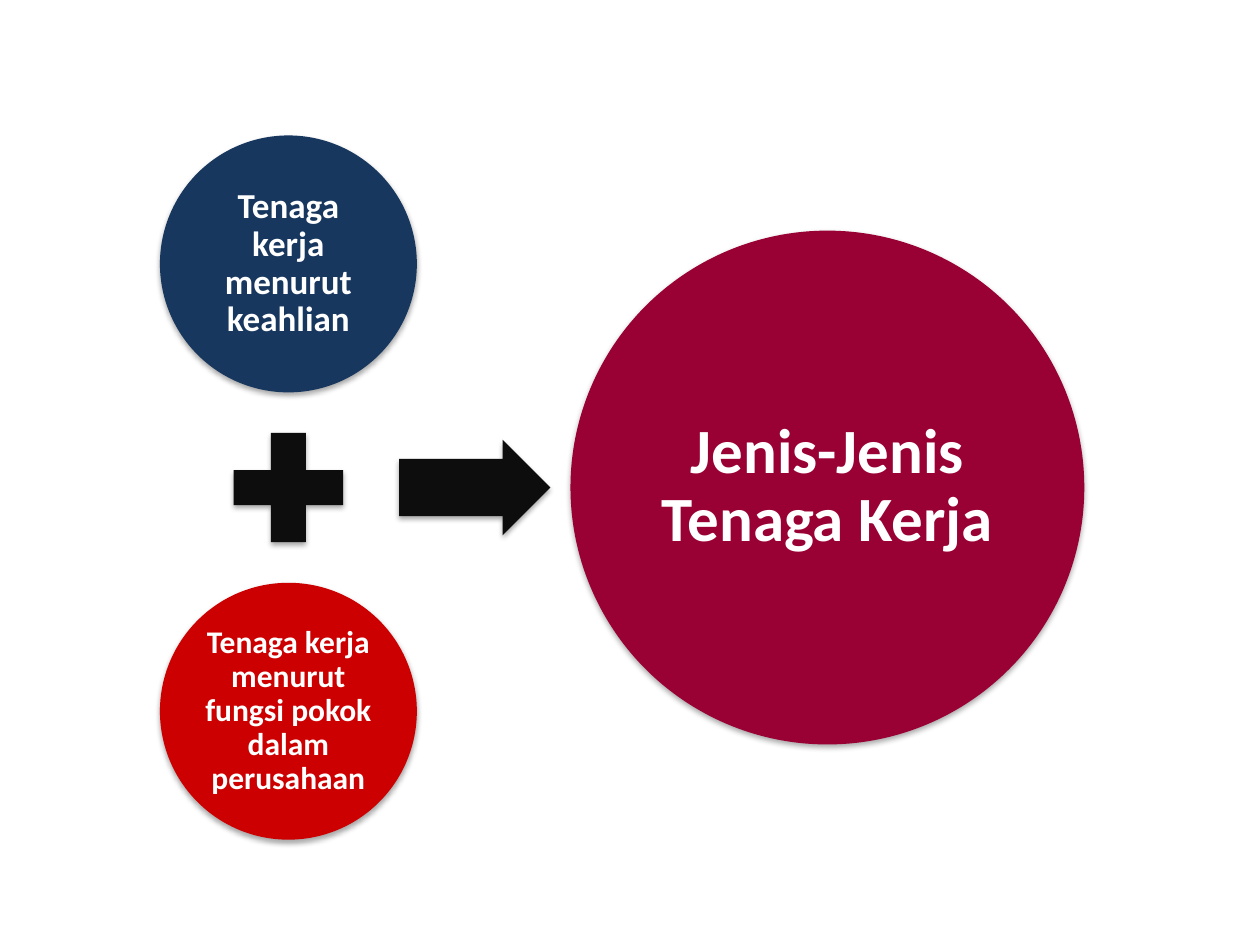
from dataclasses import dataclass

from lxml import etree
from pptx import Presentation
from pptx.dml import color
from pptx.enum import shapes, text
from pptx.oxml import ns
from pptx.util import Pt


@dataclass(frozen=True)
class Theme:
    font: str = "Calibri"
    white: str = "FFFFFF"
    navy: str = "17375E"
    red: str = "CC0000"
    maroon: str = "990033"
    black: str = "0D0D0D"
    skill_size: int = 20
    function_size: int = 18
    result_size: int = 36


THEME = Theme()
MIDDLE_Y = 278.6
LEFT_X = 164.8
CIRCLE_OFFSET = 127.8
SMALL_DIAMETER = 146.8
LARGE_DIAMETER = 2 * SMALL_DIAMETER


def add_shadow(shape):
    shape.shadow.inherit = False
    effects = shape._element.spPr.find(ns.qn("a:effectLst"))
    shadow = etree.SubElement(
        effects, ns.qn("a:outerShdw"), blurRad=str(Pt(3.1)), dist=str(Pt(1.8)),
        dir="5400000", rotWithShape="0")
    shadow_color = etree.SubElement(shadow, ns.qn("a:srgbClr"), val="000000")
    etree.SubElement(shadow_color, ns.qn("a:alpha"), val="35000")


def add_centered_shape(slide, kind, center_x, center_y, width, height, fill):
    shape = slide.shapes.add_shape(
        kind, Pt(center_x - width / 2), Pt(center_y - height / 2), Pt(width), Pt(height))
    shape.fill.solid()
    shape.fill.fore_color.rgb = color.RGBColor.from_string(fill)
    shape.line.fill.background()
    add_shadow(shape)
    return shape


def add_circle(slide, center_x, center_y, diameter, fill, label, size, inset):
    circle = add_centered_shape(
        slide, shapes.MSO_SHAPE.OVAL, center_x, center_y, diameter, diameter, fill)
    frame = circle.text_frame
    frame.word_wrap = True
    frame.vertical_anchor = text.MSO_ANCHOR.MIDDLE
    frame.margin_left = frame.margin_right = Pt(inset)
    frame.margin_top = frame.margin_bottom = Pt(inset)
    paragraph = frame.paragraphs[0]
    paragraph.text = label
    paragraph.alignment = text.PP_ALIGN.CENTER
    paragraph.line_spacing = 0.9
    paragraph.font.name = THEME.font
    paragraph.font.size = Pt(size)
    paragraph.font.bold = True
    paragraph.font.color.rgb = color.RGBColor.from_string(THEME.white)


def main():
    presentation = Presentation()
    presentation.slide_width, presentation.slide_height = Pt(720), Pt(540)
    slide = presentation.slides.add_slide(presentation.slide_layouts[6])

    add_circle(slide, LEFT_X, MIDDLE_Y - CIRCLE_OFFSET, SMALL_DIAMETER, THEME.navy,
               "Tenaga kerja menurut keahlian", THEME.skill_size, 2)
    add_centered_shape(slide, shapes.MSO_SHAPE.MATH_PLUS, LEFT_X, MIDDLE_Y,
                       85, 85, THEME.black)
    add_circle(slide, LEFT_X, MIDDLE_Y + CIRCLE_OFFSET, SMALL_DIAMETER, THEME.red,
               "Tenaga kerja menurut fungsi pokok dalam perusahaan",
               THEME.function_size, 2)
    arrow = add_centered_shape(slide, shapes.MSO_SHAPE.RIGHT_ARROW, 271.3, MIDDLE_Y,
                               86.4, 54.6, THEME.black)
    arrow.adjustments[0] = 0.6
    add_circle(slide, 472.8, MIDDLE_Y, LARGE_DIAMETER, THEME.maroon,
               "Jenis-Jenis Tenaga Kerja", THEME.result_size, 3.6)

    presentation.save("out.pptx")


if __name__ == "__main__":
    main()
